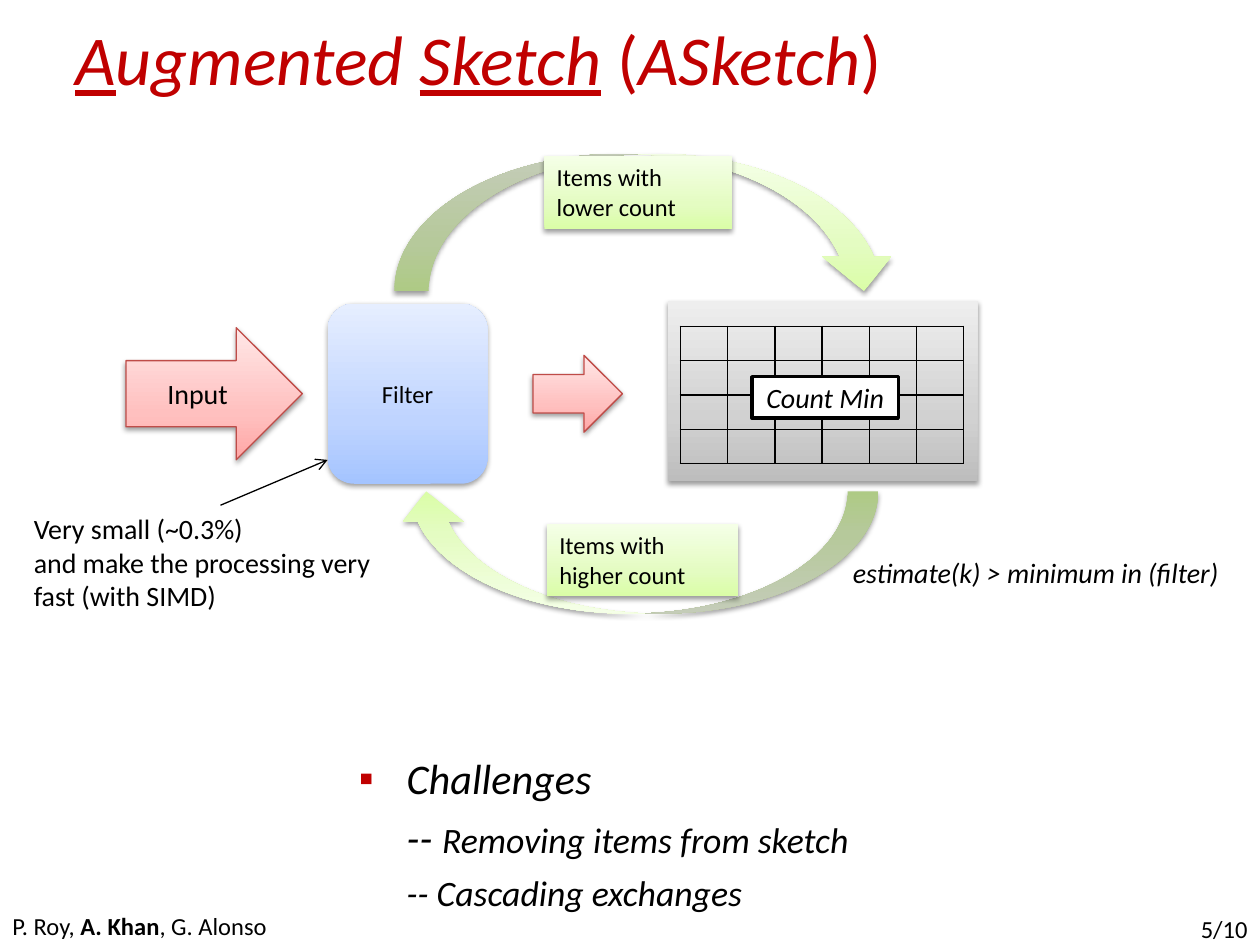
from lxml.etree import SubElement
from pptx import Presentation
from pptx.dml.color import RGBColor
from pptx.enum.shapes import MSO_CONNECTOR, MSO_SHAPE
from pptx.enum.text import MSO_ANCHOR, PP_ALIGN
from pptx.oxml.ns import qn
from pptx.util import Inches, Pt

COLORS = {"black": "000000", "white": "FFFFFF", "red": "C00000", "arrow_edge": "BF4C48"}
GRADIENTS = {  # from bottom to top
    "gray": ("BDBDBD", "D1D1D1", "EEEEEE"),
    "blue": ("A4C4FF", "BFD4FF", "E6EEFF"),
    "pink": ("FFA6A5", "FFC0BF", "FFE7E7"),
    "green": ("DAFDA7", "E4FCC2", "F5FFE7"),
}
GRADIENT_STOPS = (0, 35, 100)
FONT = "Calibri"

# Content: place (left, top, width, height in inches), shape, gradient, extras
DIAGRAM = [
    ((5.3, 2.39, 2.46, 1.43), MSO_SHAPE.RECTANGLE, "gray", {}),
    ((2.6, 2.41, 1.27, 1.43), MSO_SHAPE.ROUNDED_RECTANGLE, "blue",
     {"lines": ["Filter"], "size": 14}),
    ((1, 2.6, 1.4, 1.05), MSO_SHAPE.RIGHT_ARROW, "pink",
     {"lines": ["Input"], "size": 16, "edge": "arrow_edge"}),
    ((4.23, 2.82, 0.71, 0.61), MSO_SHAPE.RIGHT_ARROW, "pink", {"edge": "arrow_edge"}),
    ((3.13, 1.22, 4, 1.09), MSO_SHAPE.CURVED_DOWN_ARROW, "green", {}),
    ((4.32, 1.24, 1.49, 0.58), MSO_SHAPE.RECTANGLE, "green",
     {"lines": ["Items with", "lower count"], "size": 14, "label": True}),
    ((3.14, 3.9, 3.83, 0.97), MSO_SHAPE.CURVED_DOWN_ARROW, "green", {"rotation": 180}),
    ((4.34, 4.16, 1.52, 0.57), MSO_SHAPE.RECTANGLE, "green",
     {"lines": ["Items with", "higher count"], "size": 14, "label": True}),
]

# Content: place, paragraphs of (text, span format) runs, paragraph format
TEXTS = [
    ((0.5, 0, 9, 0.92),
     [[("A", {"underline": True}), ("ugmented ", {}), ("Sketch", {"underline": True}),
       (" (", {"italic": False}), ("ASketch", {}), (")", {"italic": False})]],
     {"size": 40, "italic": True, "color": "red", "anchor": MSO_ANCHOR.MIDDLE}),
    ((2.75, 5.92, 6.17, 1.31),
     [[("Challenges", {})],
      [("-- ", {}), ("Removing items from sketch", {"size": 20.4})],
      [("-- Cascading exchanges", {"size": 20.4})]],
     {"size": 24.1, "italic": True, "space": 5, "indent": 0.38, "bullet": "▪"}),
    ((6.67, 4.36, 3.14, 0.37), [[("estimate(k) > minimum in (filter)", {})]],
     {"size": 16, "italic": True, "wrap": False}),
    ((0.17, 4.01, 3.17, 0.91),
     [[("Very small (~0.3%)", {})],
      [("and make the processing very fast (with SIMD)", {})]], {"size": 16}),
    ((7.67, 7.17, 2.33, 0.4), [[("5/10", {})]],
     {"size": 14, "align": PP_ALIGN.RIGHT, "anchor": MSO_ANCHOR.MIDDLE}),
    ((0, 7.18, 4.92, 0.4),
     [[("P. Roy, ", {}), ("A. Khan", {"bold": True}), (", G. Alonso", {})]], {"size": 14}),
]
GRID = {"place": (5.4, 2.59, 2.25, 1.09), "columns": 6, "rows": 4}
COUNT_MIN = (5.97, 2.99, 1.16, 0.33)
POINTER = (1.75, 4.01, 2.6, 3.65)


def rgb(name):
    return RGBColor.from_string(COLORS[name])


def inches(lengths):
    return [Inches(length) for length in lengths]


def write(shape, paragraphs, size=14, color="black", italic=False, align=PP_ALIGN.LEFT,
          anchor=MSO_ANCHOR.TOP, wrap=True, space=0, indent=0, bullet=None):
    frame = shape.text_frame
    frame.word_wrap = wrap
    frame.vertical_anchor = anchor
    for number, spans in enumerate(paragraphs):
        para = frame.add_paragraph() if number else frame.paragraphs[0]
        para.alignment = align
        para.space_before = Pt(space)
        if indent:
            properties = para._p.get_or_add_pPr()
            properties.set("marL", str(Inches(indent)))
            properties.set("indent", str(0 if number else -Inches(indent)))
            if bullet and number == 0:
                bullet_color = SubElement(properties, qn("a:buClr"))
                SubElement(bullet_color, qn("a:srgbClr"), val=COLORS["red"])
                SubElement(properties, qn("a:buFont"), typeface="Wingdings" if bullet == "§" else "Arial")
                SubElement(properties, qn("a:buChar"), char=bullet)
        for text, style in spans:
            span = para.add_run()
            span.text = text
            span.font.name = FONT
            span.font.size = Pt(style.get("size", size))
            span.font.color.rgb = rgb(color)
            span.font.italic = style.get("italic", italic)
            span.font.bold = style.get("bold", False)
            span.font.underline = style.get("underline", False)


def set_gradient(shape, name):
    shape.fill.gradient()
    shape.fill.gradient_angle = 90
    stops = shape._element.spPr.find(qn("a:gradFill")).find(qn("a:gsLst"))
    for stop in list(stops):
        stops.remove(stop)
    for position, color in zip(GRADIENT_STOPS, GRADIENTS[name]):
        stop = SubElement(stops, qn("a:gs"), pos=str(position * 1000))
        SubElement(stop, qn("a:srgbClr"), val=color)


def add_shadow(shape):
    effects = SubElement(shape._element.spPr, qn("a:effectLst"))
    shadow = SubElement(effects, qn("a:outerShdw"), blurRad=str(Pt(3.1)), dist=str(Pt(1.6)),
                        dir="5400000", rotWithShape="0")
    color = SubElement(shadow, qn("a:srgbClr"), val=COLORS["black"])
    SubElement(color, qn("a:alpha"), val="38000")


def add_block(slide, place, kind, gradient, lines=(), size=14, edge=None, label=False, rotation=0):
    block = slide.shapes.add_shape(kind, *inches(place))
    block.rotation = rotation
    set_gradient(block, gradient)
    if edge:
        block.line.color.rgb = rgb(edge)
        block.line.width = Pt(0.75)
    else:
        block.line.fill.background()
    add_shadow(block)
    if lines:
        write(block, [[(line, {})] for line in lines], size=size,
              align=PP_ALIGN.LEFT if label else PP_ALIGN.CENTER,
              anchor=MSO_ANCHOR.TOP if label else MSO_ANCHOR.MIDDLE)


def add_grid(slide, place, columns, rows):
    table = slide.shapes.add_table(rows, columns, *inches(place)).table
    table.first_row = table.horz_banding = False
    for column in table.columns:
        column.width = Inches(place[2] / columns)
    for row in table.rows:
        row.height = Inches(place[3] / rows)
    for cell in table.iter_cells():
        cell.margin_top = cell.margin_bottom = 0
        SubElement(cell.text_frame.paragraphs[0]._p, qn("a:endParaRPr"), sz="800")
        properties = cell._tc.get_or_add_tcPr()
        for side in ("lnL", "lnR", "lnT", "lnB"):
            border = SubElement(properties, qn(f"a:{side}"), w=str(Pt(1)))
            fill = SubElement(border, qn("a:solidFill"))
            SubElement(fill, qn("a:srgbClr"), val=COLORS["black"])
        cell.fill.background()


def add_pointer(slide, ends):
    pointer = slide.shapes.add_connector(MSO_CONNECTOR.STRAIGHT, *inches(ends))
    pointer.line.color.rgb = rgb("black")
    pointer.line.width = Pt(0.75)
    SubElement(pointer.line._get_or_add_ln(), qn("a:tailEnd"), type="arrow")
    SubElement(pointer._element.spPr, qn("a:effectLst"))


def main():
    deck = Presentation()
    deck.slide_width, deck.slide_height = inches((10, 7.5))
    page = deck.slides.add_slide(deck.slide_layouts[6])

    # Flow between filter and sketch
    for place, kind, gradient, extras in DIAGRAM:
        add_block(page, place, kind, gradient, **extras)

    # Sketch cells with their name on top
    add_grid(page, **GRID)
    name_box = page.shapes.add_shape(MSO_SHAPE.RECTANGLE, *inches(COUNT_MIN))
    name_box.shadow.inherit = False
    name_box.fill.solid()
    name_box.fill.fore_color.rgb = rgb("white")
    name_box.line.color.rgb = rgb("black")
    name_box.line.width = Pt(2)
    write(name_box, [[("Count Min", {})]], size=16, italic=True,
          align=PP_ALIGN.CENTER, anchor=MSO_ANCHOR.MIDDLE)

    # Title, notes on the diagram, challenges and footer
    add_pointer(page, POINTER)
    for place, paragraphs, style in TEXTS:
        write(page.shapes.add_textbox(*inches(place)), paragraphs, **style)

    deck.save("out.pptx")


if __name__ == "__main__":
    main()
